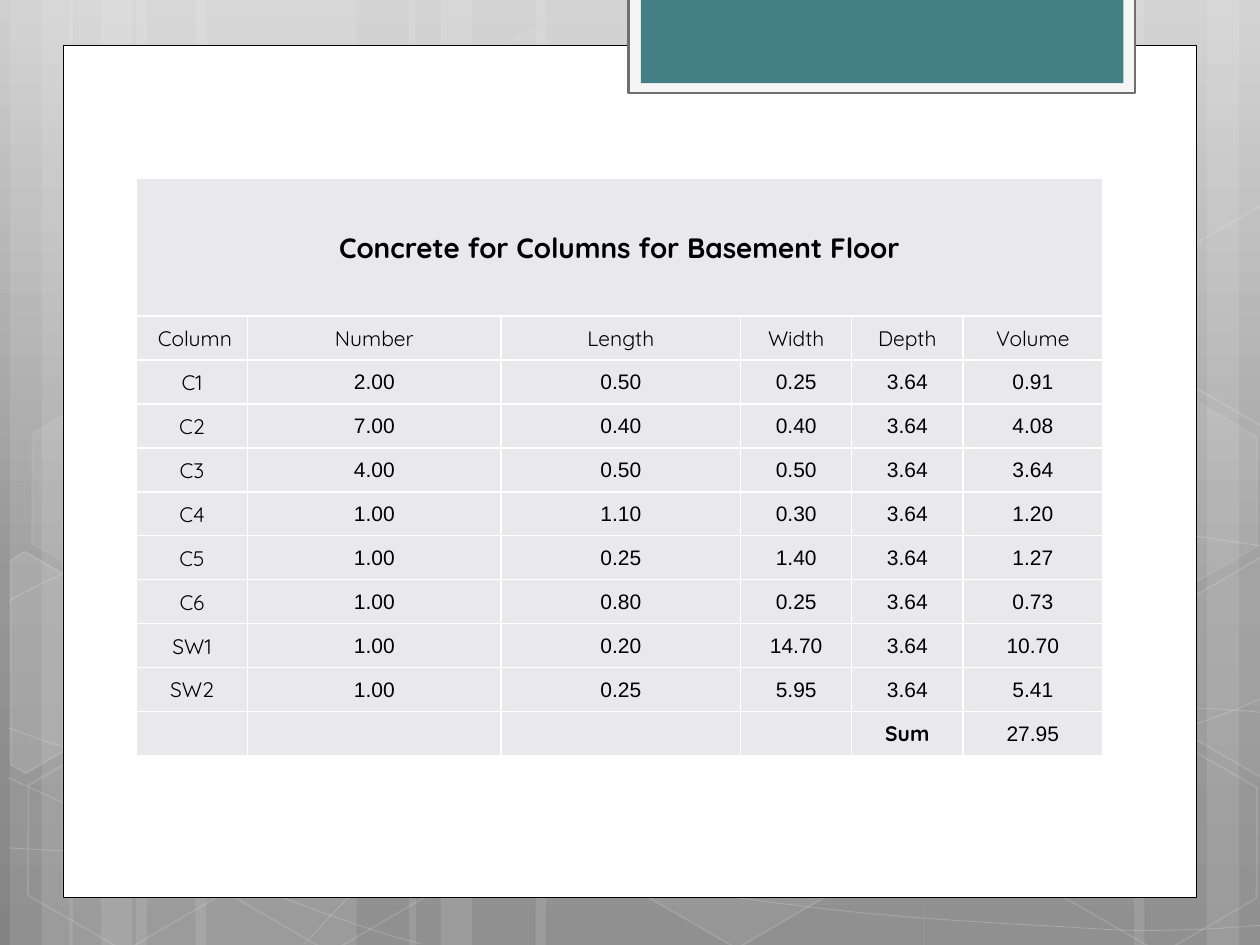
from collections import namedtuple
from copy import deepcopy

from lxml import etree
from pptx import Presentation
from pptx.dml.color import RGBColor
from pptx.enum.shapes import MSO_SHAPE
from pptx.enum.text import MSO_ANCHOR, PP_ALIGN
from pptx.oxml.ns import qn
from pptx.util import Cm, Pt

RECTANGLE, HEXAGON = MSO_SHAPE.RECTANGLE, MSO_SHAPE.HEXAGON
CENTER, MIDDLE = PP_ALIGN.CENTER, MSO_ANCHOR.MIDDLE
WHITE, BLACK, CELL_GREY = "FFFFFF", "000000", "E9E9ED"
FONT, NUMBER_FONT = "Quicksand", "Arial"

Box = namedtuple("Box", "left top width height")  # centimetres

BACKDROP_STOPS = [(0, "CFCFCF"), (0.62, "969696"), (1, "848484")]

# Light bands: left, width
BANDS = [(start + offset, width)
         for start, wide in ((0.2, 4.45), (1.4, 4.45))
         for offset, width in ((2.54, wide), (0, 1.27), (0.64, 2.12))]
BANDS += [(18.62, 4.45), (24.33, 1.27), (22.86, 2.12)]
BANDS += [(10.8, 7.83), (8.25, 1.27), (8.89, 2.12)]

# Curves in tenths of the slide width: a start, then two handles and an end per arc
CURVES = [
    [(0.07, 6.73), (0.61, 6.76), (1.15, 6.79), (1.9, 6.78), (2.65, 6.77), (3.58, 6.75),
     (4.58, 6.65), (5.58, 6.55), (7, 6.36), (7.92, 6.17), (8.83, 5.98), (9.77, 5.68),
     (10.07, 5.51)],
    [(0.07, 4.77), (0.36, 4.61), (0.65, 4.46), (1.21, 4.31), (1.78, 4.16), (2.59, 3.94),
     (3.47, 3.87), (4.36, 3.8), (5.44, 3.79), (6.54, 3.87), (7.64, 3.95), (9.47, 4.26),
     (10.07, 4.34)],
    [(0.06, 6.17), (1.27, 6.72), (2.47, 7.27), (3.34, 7.49)],
    [(0.07, 5.78), (0.38, 5.89), (0.7, 6), (1.28, 6.16), (1.86, 6.31), (2.73, 6.56),
     (3.57, 6.73), (4.4, 6.9), (5.45, 7.08), (6.28, 7.18), (7.11, 7.29), (8, 7.33),
     (8.53, 7.36), (9.05, 7.4), (9.19, 7.38), (9.45, 7.38), (9.71, 7.37), (9.89, 7.35),
     (10.07, 7.34)],
    [(2.42, 7.49), (2.6, 7.29), (2.78, 7.09), (3.02, 6.91), (3.26, 6.73), (3.6, 6.53),
     (3.88, 6.39), (4.16, 6.25), (4.33, 6.19), (4.7, 6.09), (5.06, 5.99), (5.73, 5.85),
     (6.08, 5.78), (6.44, 5.71), (6.49, 5.71), (6.8, 5.69), (7.11, 5.66), (7.6, 5.63),
     (7.94, 5.62), (8.29, 5.61), (8.86, 5.62), (8.86, 5.62), (8.86, 5.62), (9.53, 5.62),
     (9.53, 5.62), (9.71, 5.63), (9.88, 5.64), (9.97, 5.65), (10.06, 5.66), (10.03, 5.65),
     (10.06, 5.66)],
]

# Hexagons: left, top, fill opacity, line opacity
HEXAGONS = [(8.48, 0.91, 4, 8), (12.62, 14.96, 6, 12), (0.28, 15.01, None, 12),
            (0.36, 7.92, 7, 8), (4.42, 15.04, None, 12), (19.13, 11.51, 10, 12),
            (21.18, 15.06, None, 12), (21.18, 7.98, 7, 8)]

# Hexagons cut by the slide edge, in tenths of the width: left, top, corners, fill opacity
LEFT_CUT = [(0, 0.12), (0.06, 0), (0.95, 0), (1.38, 0.77), (0.95, 1.52), (0.81, 1.52)]
RIGHT_CUT = [(0, 0.76), (0.43, 0), (0.52, 0), (1.36, 1.45), (1.32, 1.52), (0.44, 1.52)]
CUT_HEXAGONS = [(-0.33, 4.59, LEFT_CUT, 10), (9.17, 4.44, RIGHT_CUT, 4),
                (9.17, 1.65, RIGHT_CUT, None)]

TITLE = "Concrete for Columns for Basement Floor"
ROWS = [
    ["Column ", "Number", "Length", "Width", "Depth", "Volume"],
    ["C1", "2.00", "0.50", "0.25", "3.64", "0.91"],
    ["C2", "7.00", "0.40", "0.40", "3.64", "4.08"],
    ["C3", "4.00", "0.50", "0.50", "3.64", "3.64"],
    ["C4", "1.00", "1.10", "0.30", "3.64", "1.20"],
    ["C5", "1.00", "0.25", "1.40", "3.64", "1.27"],
    ["C6", "1.00", "0.80", "0.25", "3.64", "0.73"],
    ["SW1", "1.00", "0.20", "14.70", "3.64", "10.70"],
    ["SW2", "1.00", "0.25", "5.95", "3.64", "5.41"],
    ["", "", "", "", "Sum", "27.95"],
]
COLUMN_WIDTHS = [2.24, 5.11, 4.83, 2.24, 2.24, 2.82]
TITLE_HEIGHT = 2.77


def paint(fill, color, opacity=100):
    fill.solid()
    fill.fore_color.rgb = RGBColor.from_string(color)
    if opacity < 100:
        for node in fill._xPr.iter(qn("a:srgbClr")):
            etree.SubElement(node, qn("a:alpha"), val=str(opacity * 1000))


def style(shape, fill=None, line=None, weight=1, fill_opacity=100, line_opacity=100):
    shape.shadow.inherit = False
    if fill:
        paint(shape.fill, fill, fill_opacity)
    else:
        shape.fill.background()
    if line:
        paint(shape.line.fill, line, line_opacity)
        shape.line.width = Pt(weight)
    else:
        shape.line.fill.background()


def add_preset(slide, kind, box):
    return slide.shapes.add_shape(kind, *(Cm(value) for value in box))


def add_outline(slide, box, points, close):
    unit = box.width / 10
    places = [(Cm(box.left + x * unit), Cm(box.top + y * unit)) for x, y in points]
    builder = slide.shapes.build_freeform(*places[0])
    builder.add_line_segments(places[1:], close=close)
    return builder.convert_to_shape()


def add_curve(slide, box, points):
    """Draw the points as an outline, then join every three segments into one arc."""
    shape = add_outline(slide, box, points, False)
    segments = list(shape._element.iter(qn("a:lnTo")))
    for first in range(0, len(segments), 3):
        arc = etree.Element(qn("a:cubicBezTo"))
        segments[first].addprevious(arc)
        for segment in segments[first:first + 3]:
            arc.append(segment[0])
            segment.getparent().remove(segment)
    return shape


def add_backdrop(slide, box):
    # Grey gradient, top to bottom
    fill = slide.background.fill
    fill.gradient()
    fill.gradient_angle = 270
    stop_list = next(slide.element.iter(qn("a:gsLst")))
    stop_list.append(deepcopy(stop_list[0]))
    for stop, (position, color) in zip(fill.gradient_stops, BACKDROP_STOPS):
        stop.position = position
        stop.color.rgb = RGBColor.from_string(color)
    # Vertical bands
    for left, width in BANDS:
        band = add_preset(slide, RECTANGLE, Box(box.left + left, box.top, width, box.height))
        style(band, WHITE, fill_opacity=10)
    # Thin curves
    for curve in CURVES:
        style(add_curve(slide, box, curve), None, WHITE, 0.5, line_opacity=20)
    # Hexagons, whole and cut
    for left, top, opacity, line_opacity in HEXAGONS:
        hexagon = add_preset(slide, HEXAGON, Box(box.left + left, box.top + top, 4.45, 3.86))
        hexagon.adjustments[0] = 0.285
        hexagon.rotation = 30
        style(hexagon, opacity and WHITE, WHITE, 1, opacity, line_opacity)
    for left, top, corners, opacity in CUT_HEXAGONS:
        points = [(left + x, top + y) for x, y in corners]
        hexagon = add_outline(slide, box, points, True)
        hexagon.rotation = 30
        style(hexagon, opacity and WHITE, WHITE, 1, opacity, 12)


def add_panel(slide, box):
    style(add_preset(slide, RECTANGLE, box), WHITE, BLACK, 0.5)
    # Tab hanging from the top edge
    tab = Box(box.left + 11.4, box.top - 0.96, 10.21, 1.93)
    style(add_preset(slide, RECTANGLE, tab), "F5F5F5", "6F6F6F", 1.25)
    inset = Box(tab.left + 0.25, tab.top, 9.73, 1.73)
    style(add_preset(slide, RECTANGLE, inset), "438086")


def fill_cell(cell, text, size=12, bold=False):
    properties = cell._tc.get_or_add_tcPr()
    for side in ("lnL", "lnR", "lnT", "lnB"):
        border = etree.SubElement(properties, qn("a:" + side), w=str(Pt(1)))
        solid = etree.SubElement(border, qn("a:solidFill"))
        etree.SubElement(solid, qn("a:srgbClr"), val=WHITE)
    paint(cell.fill, CELL_GREY)
    cell.vertical_anchor = MIDDLE
    cell.margin_left = cell.margin_right = cell.margin_top = Cm(0.02)
    cell.margin_bottom = 0
    if not text:
        return
    paragraph = cell.text_frame.paragraphs[0]
    paragraph.alignment = CENTER
    paragraph._p.get_or_add_pPr().set("rtl", "1")
    run = paragraph.add_run()
    run.text = text
    run.font.size, run.font.bold, run.font.name = Pt(size), bold, FONT
    run.font.color.rgb = RGBColor.from_string(BLACK)
    # Digits in right-to-left paragraphs take the complex-script font
    etree.SubElement(run._r.get_or_add_rPr(), qn("a:cs"), typeface=NUMBER_FONT)


def add_quantity_table(slide, box):
    frame = slide.shapes.add_table(len(ROWS) + 1, len(COLUMN_WIDTHS),
                                   *(Cm(value) for value in box))
    table = frame.table
    table.first_row = table.horz_banding = False
    for column, width in zip(table.columns, COLUMN_WIDTHS):
        column.width = Cm(width)
    for row in table.rows:
        row.height = Cm((box.height - TITLE_HEIGHT) / len(ROWS))
    table.rows[0].height = Cm(TITLE_HEIGHT)
    # Title across all columns
    table.cell(0, 0).merge(table.cell(0, len(COLUMN_WIDTHS) - 1))
    for index in range(len(COLUMN_WIDTHS)):
        fill_cell(table.cell(0, index), "" if index else TITLE, 16, True)
    # Headings, quantities and sum
    for row_index, texts in enumerate(ROWS, 1):
        for index, text in enumerate(texts):
            fill_cell(table.cell(row_index, index), text, bold=text == "Sum")


def main():
    presentation = Presentation()
    presentation.slide_width, presentation.slide_height = Cm(25.4), Cm(19.05)
    slide = presentation.slides.add_slide(presentation.slide_layouts[6])
    add_backdrop(slide, Box(0, 0, 25.4, 19.05))
    add_panel(slide, Box(1.27, 0.91, 22.86, 17.19))
    add_quantity_table(slide, Box(2.75, 3.6, sum(COLUMN_WIDTHS), 11.63))
    presentation.save("out.pptx")


if __name__ == "__main__":
    main()
